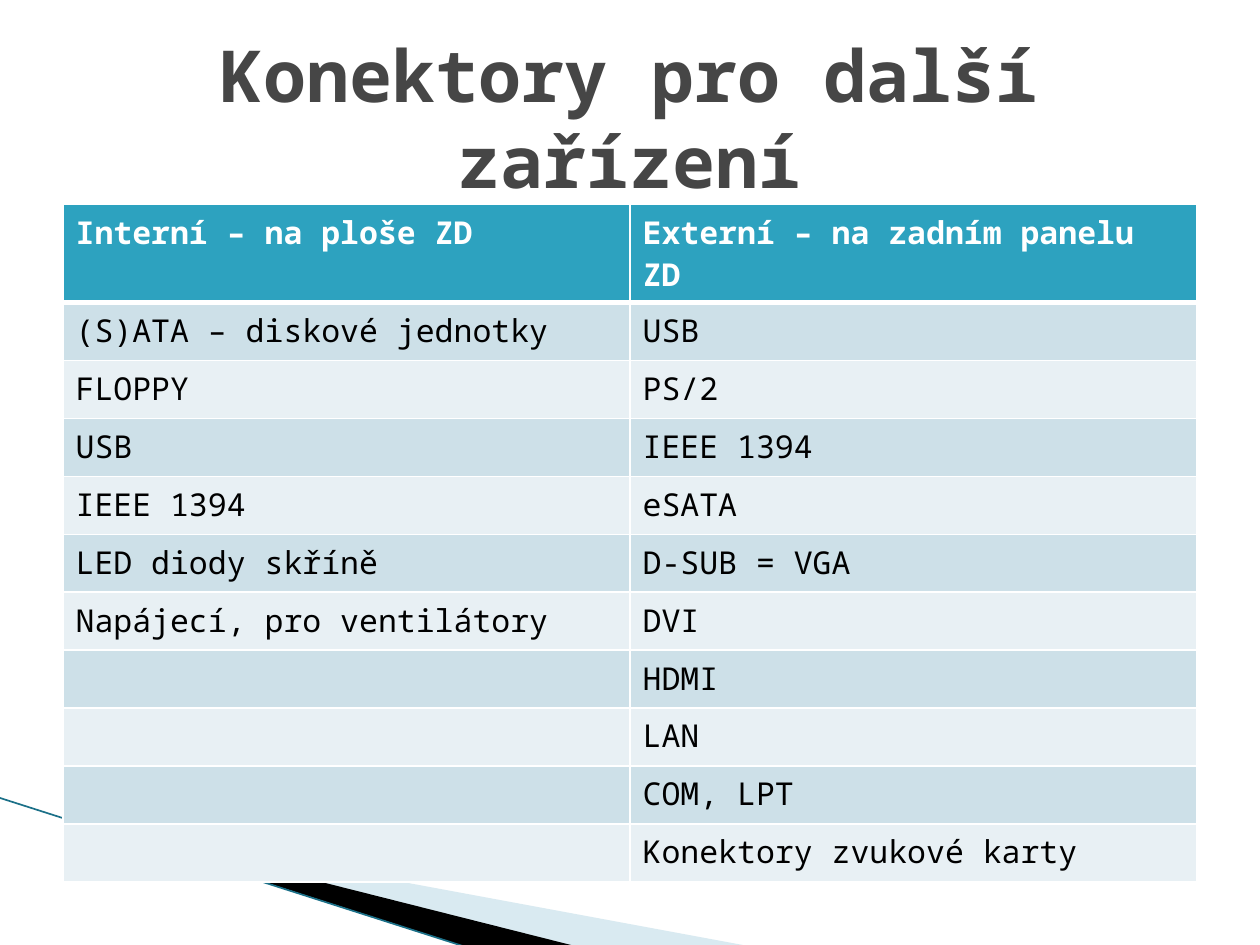
import pptx
import pptx.dml.color
import pptx.enum.shapes
import pptx.enum.text
import pptx.oxml
import pptx.oxml.ns
import pptx.util
from dataclasses import dataclass
from lxml import etree

Inches = pptx.util.Inches
Pt = pptx.util.Pt
qn = pptx.oxml.ns.qn


@dataclass(frozen=True)
class Theme:
    font: str = "Noto Sans Mono"
    title_size: int = 41
    cell_size: int = 18
    title: str = "464646"
    header: str = "2DA2BF"
    header_text: str = "FFFFFF"
    text: str = "000000"
    bands: tuple = ("CDE0E8", "E8F0F4")
    border: str = "FFFFFF"
    border_width: float = 1
    header_border_width: float = 3
    pale: str = "A0CBDC"
    dark: str = "000000"
    line: str = "1B7088"


def rgb(value):
    return pptx.dml.color.RGBColor.from_string(value)


class SlideBuilder:
    def __init__(self, prs, theme):
        self.theme = theme
        self.s = prs.slides.add_slide(prs.slide_layouts[5])

    def run(self, p, text, size, color, bold):
        r = p.add_run()
        r.text = text
        r.font.name = self.theme.font
        r.font.size = Pt(size)
        r.font.bold = bold
        r.font.color.rgb = rgb(color)

    def title(self, text, left, top, width, height):
        sp = self.s.shapes.title
        sp.left, sp.top = Inches(left), Inches(top)
        sp.width, sp.height = Inches(width), Inches(height)
        tf = sp.text_frame
        tf.word_wrap = True
        tf.auto_size = pptx.enum.text.MSO_AUTO_SIZE.NONE
        tf.vertical_anchor = pptx.enum.text.MSO_ANCHOR.MIDDLE
        p = tf.paragraphs[0]
        p.alignment = pptx.enum.text.PP_ALIGN.CENTER
        self.run(p, text, self.theme.title_size, self.theme.title, True)

    def polygon(self, points, color, opacity=100):
        start, *rest = [(Inches(x), Inches(y)) for x, y in points]
        builder = self.s.shapes.build_freeform(*start)
        builder.add_line_segments(rest, close=True)
        sp = builder.convert_to_shape()
        sp.shadow.inherit = False
        sp.fill.solid()
        sp.fill.fore_color.rgb = rgb(color)
        sp.line.fill.background()
        if opacity < 100:
            clr = next(sp.element.spPr.iter(qn("a:srgbClr")))
            etree.SubElement(clr, qn("a:alpha"), val=str(opacity * 1000))

    def line(self, x1, y1, x2, y2, color, width):
        sp = self.s.shapes.add_connector(
            pptx.enum.shapes.MSO_CONNECTOR.STRAIGHT,
            Inches(x1), Inches(y1), Inches(x2), Inches(y2))
        sp.line.color.rgb = rgb(color)
        sp.line.width = Pt(width)
        etree.SubElement(sp.element.spPr, qn("a:effectLst"))

    def borders(self, cell, **widths):
        tc_pr = cell._tc.get_or_add_tcPr()
        for side in "LRTB":
            width = widths.get(side, self.theme.border_width)
            ln = etree.SubElement(tc_pr, qn("a:ln" + side), w=str(Pt(width)))
            fill = etree.SubElement(ln, qn("a:solidFill"))
            etree.SubElement(fill, qn("a:srgbClr"), val=self.theme.border)

    def table(self, rows, left, top, width, row_height):
        t = self.theme
        table = self.s.shapes.add_table(
            len(rows), len(rows[0]), Inches(left), Inches(top),
            Inches(width), Inches(row_height * len(rows))).table
        for i, row in enumerate(rows):
            table.rows[i].height = Inches(row_height)
            header = i == 0
            fill = t.header if header else t.bands[(i - 1) % 2]
            color = t.header_text if header else t.text
            widths = {0: {"B": t.header_border_width},
                      1: {"T": t.header_border_width}}.get(i, {})
            for j, text in enumerate(row):
                cell = table.cell(i, j)
                self.borders(cell, **widths)
                cell.fill.solid()
                cell.fill.fore_color.rgb = rgb(fill)
                p = cell.text_frame.paragraphs[0]
                if text:
                    self.run(p, text, t.cell_size, color, header)
                else:
                    p.font.size = Pt(t.cell_size)


CONNECTORS = [
    ("Interní – na ploše ZD", "Externí – na zadním panelu ZD"),
    ("(S)ATA – diskové jednotky", "USB"),
    ("FLOPPY", "PS/2"),
    ("USB", "IEEE 1394"),
    ("IEEE 1394", "eSATA"),
    ("LED diody skříně", "D-SUB = VGA"),
    ("Napájecí, pro ventilátory", "DVI"),
    ("", "HDMI"),
    ("", "LAN"),
    ("", "COM, LPT"),
    ("", "Konektory zvukové karty"),
]


def main():
    prs = pptx.Presentation()
    prs.slide_width, prs.slide_height = Inches(10), Inches(7.5)
    theme = Theme()
    b = SlideBuilder(prs, theme)
    b.polygon([(0.55, 6.51), (5.95, 7.51), (4.56, 7.51), (0.55, 6.5)],
              theme.pale, 40)
    b.polygon([(0.53, 6.49), (4.57, 7.51), (3.72, 7.52), (0.54, 6.5)],
              theme.dark)
    b.line(-0.01, 6.33, 3.71, 7.52, theme.line, 0.95)
    b.table(CONNECTORS, 0.5, 1.62, 9, 0.46)
    b.title("Konektory pro další zařízení", 0.5, 0.3, 9, 1.25)
    prs.save("out.pptx")


if __name__ == "__main__":
    main()
